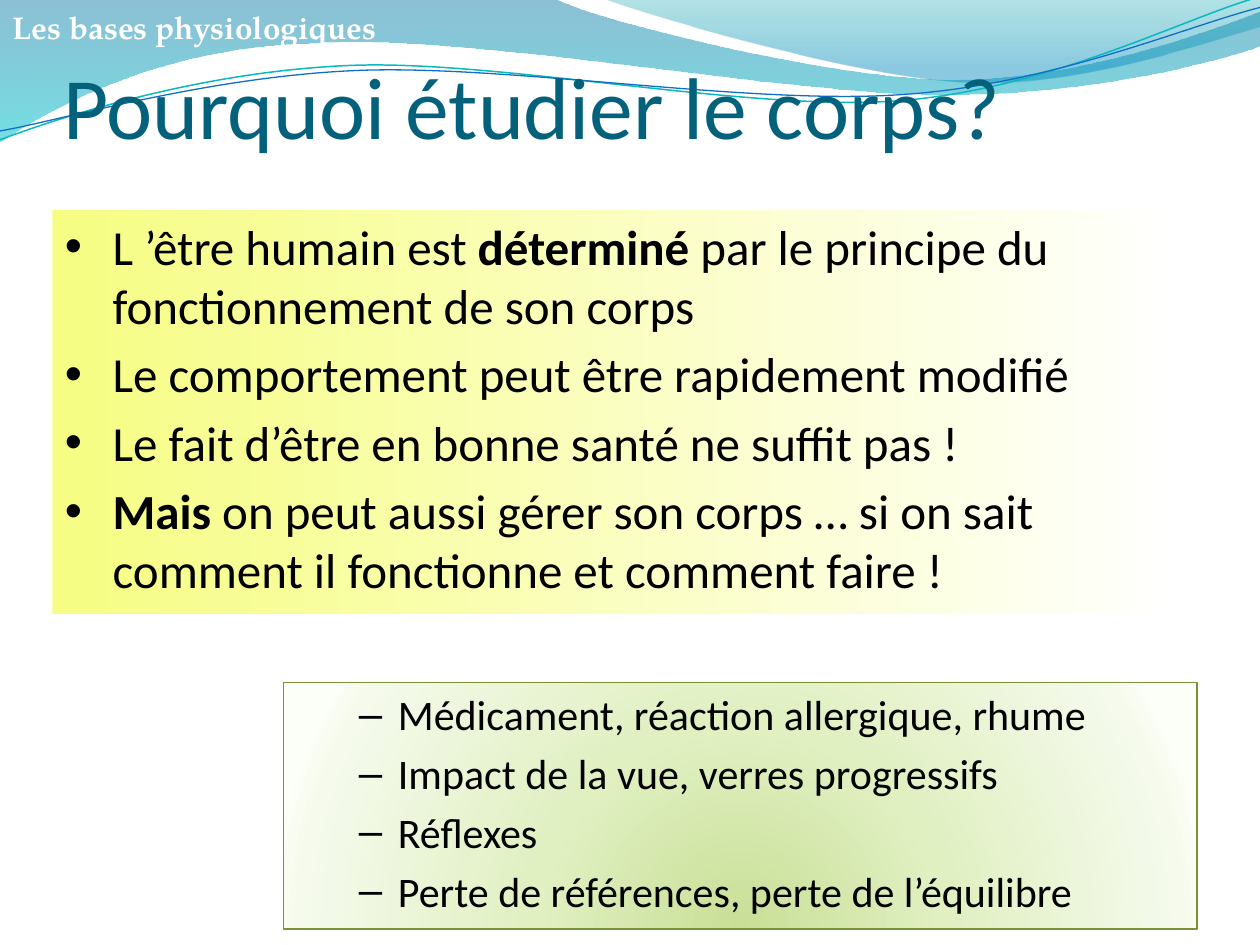
import math

import pptx
import pptx.dml.color
import pptx.enum.shapes
import pptx.enum.text
import pptx.oxml
import pptx.oxml.ns
import pptx.util

RGB = pptx.dml.color.RGBColor
TEAL = RGB(0x04, 0x61, 0x7B)
WHITE = RGB(0xFF, 0xFF, 0xFF)
BLACK = RGB(0x00, 0x00, 0x00)
YELLOW = RGB(0xF6, 0xFD, 0x82)
OLIVE = RGB(0x7B, 0x91, 0x35)
CYAN_LINE = RGB(0x0A, 0xB8, 0xBF)
BLUE_LINE = RGB(0x0F, 0x6F, 0xC6)
LARGE_WAVE = [(0, RGB(0x00, 0x74, 0xA1), 45), (100, RGB(0x00, 0xC6, 0xCF), 55)]
RIGHT_WAVE = [(0, RGB(0x00, 0xA1, 0xA9), 30), (80, RGB(0x00, 0x8B, 0xBF), 45)]
YELLOW_FADE = [(0, YELLOW, 100), (100, WHITE, 100)]
GREEN_GLOW = [(0, RGB(0xC9, 0xDF, 0x97), 100), (43, RGB(0xE0, 0xF0, 0xC1), 100),
              (93, RGB(0xF5, 0xFA, 0xEC), 100), (100, RGB(0xFC, 0xFE, 0xF8), 100)]
GLOW = '<a:path path="circle"><a:fillToRect l="50000" t="130000" r="50000" b="-30000"/></a:path>'

WIDTH = pptx.util.Inches(10)
HEIGHT = pptx.util.Inches(7.5)
COLUMNS, ROWS = 120, 90
TILT = 2.7

REASONS = [
    [("L\u00a0’être humain est ", False), ("déterminé", True),
     (" par le principe du fonctionnement de son corps", False)],
    [("Le comportement peut être rapidement modifié", False)],
    [("Le fait d’être en bonne santé ne suffit pas !", False)],
    [("Mais ", True), ("on peut aussi gérer son corps … si on sait comment il fonctionne "
                       "et comment faire !", False)],
]
EXAMPLES = [[(text, False)] for text in (
    "Médicament, réaction allergique, rhume", "Impact de la vue, verres progressifs",
    "Réflexes", "Perte de références, perte de l’équilibre")]


def grid(left, top, columns, rows):
    """Return the lengths of a box given in columns and rows of the slide."""
    return (int(left * WIDTH / COLUMNS), int(top * HEIGHT / ROWS),
            int(columns * WIDTH / COLUMNS), int(rows * HEIGHT / ROWS))


def xml(text):
    """Return a drawing element from its text."""
    head, tail = text.split(">", 1)
    return pptx.oxml.parse_xml(f"{head} {pptx.oxml.ns.nsdecls('a')}>{tail}")


def fill_gradient(shape, stops, course):
    """Fill a shape with stops of position, colour and opacity in percent."""
    shape.fill.gradient()
    marks = "".join(
        f'<a:gs pos="{place * 1000}"><a:srgbClr val="{colour}">'
        f'<a:alpha val="{opacity * 1000}"/></a:srgbClr></a:gs>'
        for place, colour, opacity in stops)
    properties = shape._element.spPr
    properties.replace(properties.find(pptx.oxml.ns.qn("a:gradFill")),
                       xml(f"<a:gradFill><a:gsLst>{marks}</a:gsLst>{course}</a:gradFill>"))


def linear(degrees):
    """Return the course of a straight gradient."""
    return f'<a:lin ang="{degrees * 60000}" scaled="0"/>'


def turn(pieces, degrees):
    """Turn pieces clockwise around the middle of the curve's two ends."""
    middle_x = (pieces[0][0] + pieces[-1][-2]) / 2
    middle_y = (pieces[0][1] + pieces[-1][-1]) / 2
    cosine, sine = math.cos(math.radians(degrees)), math.sin(math.radians(degrees))
    turned = []
    for piece in pieces:
        spots = []
        for x, y in zip(piece[::2], piece[1::2]):
            spots += [middle_x + (x - middle_x) * cosine - (y - middle_y) * sine,
                      middle_y + (x - middle_x) * sine + (y - middle_y) * cosine]
        turned.append(tuple(spots))
    return turned


def add_curve(page, box, pieces, close):
    """Draw corners and Bézier pieces given in percent of the box's width."""
    left, top, width, _ = box
    routes = [[(left + int(x * width / 100), top + int(y * width / 100))
               for x, y in zip(piece[::2], piece[1::2])] for piece in pieces]
    builder = page.shapes.build_freeform(*routes[0][-1], scale=1.0)
    builder.add_line_segments([route[-1] for route in routes[1:]], close=close)
    curve = builder.convert_to_shape()
    curve.shadow.inherit = False
    sides = list(curve._element.iter(pptx.oxml.ns.qn("a:lnTo")))
    for side, route in zip(sides, routes[1:]):
        if len(route) == 3:
            spots = "".join(f'<a:pt x="{x - curve.left}" y="{y - curve.top}"/>' for x, y in route)
            side.getparent().replace(side, xml(f"<a:cubicBezTo>{spots}</a:cubicBezTo>"))
    return curve


def add_waves(page, box):
    """Draw the two filled waves and the two thin tilted lines."""
    large = [(0, 0), (44, -0.1), (47.6, 1.7, 66.4, 6.3, 75.8, 6.3),
             (85.3, 6.3, 95.8, 2.6, 100, 0.9), (100.1, 3.6),
             (98.3, 4.4, 87, 7.6, 74.6, 7.5), (62.2, 7.5, 38.2, 2.8, 25.7, 3.4),
             (12.9, 3.6, 4.6, 8.3, -0.1, 11.3)]
    right = [(47.9, -0.1), (50.9, 1.1, 68.2, 6.2, 76.9, 6.5),
             (85.6, 6.9, 96.1, 3.2, 100, 2.1), (100, 0)]
    for pieces, stops in ((large, LARGE_WAVE), (right, RIGHT_WAVE)):
        wave = add_curve(page, box, pieces, True)
        fill_gradient(wave, stops, linear(90))
        wave.line.fill.background()
    cyan = [(0, 11.1), (4.8, 9.3, 15.8, 5.7, 27.7, 5.2),
            (39.5, 4.7, 59.3, 8.9, 71.3, 8), (83.3, 7.1, 93.8, 1.5, 99.8, -0.2)]
    blue = [(0, 10.4), (4.7, 9.6, 16.4, 6.1, 28.3, 5.6),
            (40.3, 5.1, 59.7, 8.4, 71.7, 7.5), (83.6, 6.7, 94.1, 2.1, 100, 0.6)]
    for pieces, colour, weight in ((cyan, CYAN_LINE, 0.85), (blue, BLUE_LINE, 0.75)):
        line = add_curve(page, box, turn(pieces, TILT), False)
        line.rotation = 360 - TILT
        line.fill.background()
        line.line.color.rgb = colour
        line.line.width = pptx.util.Pt(weight)


def style(para, face, size, colour, bold=None):
    """Set the font of a paragraph."""
    para.font.name = face
    para.font.size = pptx.util.Pt(size)
    para.font.color.rgb = colour
    para.font.bold = bold
    para.alignment = pptx.enum.text.PP_ALIGN.LEFT


def place_title(page, box):
    """Place the title in front of the waves."""
    title = page.shapes.title
    page.shapes._spTree.append(title._element)
    title.left, title.top, title.width, title.height = box
    frame = title.text_frame
    frame.text = "Pourquoi étudier le corps?"
    frame.auto_size = pptx.enum.text.MSO_AUTO_SIZE.NONE
    frame.vertical_anchor = pptx.enum.text.MSO_ANCHOR.BOTTOM
    frame.margin_left = frame.margin_right = frame.margin_bottom = 0
    style(frame.paragraphs[0], "Calibri", 50, TEAL)


def add_header(page, box):
    """Write the chapter name in the top corner."""
    frame = page.shapes.add_textbox(*box).text_frame
    frame.word_wrap = False
    frame.auto_size = pptx.enum.text.MSO_AUTO_SIZE.SHAPE_TO_FIT_TEXT
    frame.text = "Les bases physiologiques"
    style(frame.paragraphs[0], "TeX Gyre Pagella", 18, WHITE, True)


def add_list(page, box, items, size, bullet, level, margin, hang):
    """Draw a panel with a bulleted list and return it."""
    panel = page.shapes.add_shape(pptx.enum.shapes.MSO_SHAPE.RECTANGLE, *box)
    panel.shadow.inherit = False
    panel.line.fill.background()
    frame = panel.text_frame
    frame.word_wrap = True
    frame.auto_size = pptx.enum.text.MSO_AUTO_SIZE.SHAPE_TO_FIT_TEXT
    frame.vertical_anchor = pptx.enum.text.MSO_ANCHOR.TOP
    for index, spans in enumerate(items):
        para = frame.add_paragraph() if index else frame.paragraphs[0]
        style(para, "Calibri", size, BLACK)
        para.level = level
        properties = para._p.get_or_add_pPr()
        properties.set("marL", str(pptx.util.Inches(margin)))
        properties.set("indent", str(-pptx.util.Inches(hang)))
        parts = ('<a:spcBef><a:spcPct val="20000"/></a:spcBef>',
                 '<a:buFont typeface="Arial"></a:buFont>',
                 f'<a:buChar char="{bullet}"></a:buChar>')
        for place, part in enumerate(parts):
            properties.insert(place, xml(part))
        for text, bold in spans:
            span = para.add_run()
            span.text = text
            if bold:
                span.font.bold = True
    return panel


def add_reasons(page, box):
    """Add the yellow panel of reasons."""
    panel = add_list(page, box, REASONS, 28, "•", 0, 0.38, 0.38)
    fill_gradient(panel, YELLOW_FADE, linear(0))


def add_examples(page, box):
    """Add the green outlined panel of examples."""
    panel = add_list(page, box, EXAMPLES, 24, "–", 1, 0.81, 0.31)
    fill_gradient(panel, GREEN_GLOW, GLOW)
    panel.line.color.rgb = OLIVE
    panel.line.width = pptx.util.Pt(0.75)


def main():
    """Build the slide and save the deck."""
    deck = pptx.Presentation()
    deck.slide_width, deck.slide_height = WIDTH, HEIGHT
    page = deck.slides.add_slide(deck.slide_layouts[5])
    add_waves(page, grid(0, 0, COLUMNS, 14))
    place_title(page, grid(6, 0, 108, 15))
    add_reasons(page, grid(5, 20, 108, 38.5))
    add_header(page, grid(0, 0.15, 38, 4.8))
    add_examples(page, grid(27, 65, 87, 23.5))
    deck.save("out.pptx")


if __name__ == "__main__":
    main()
